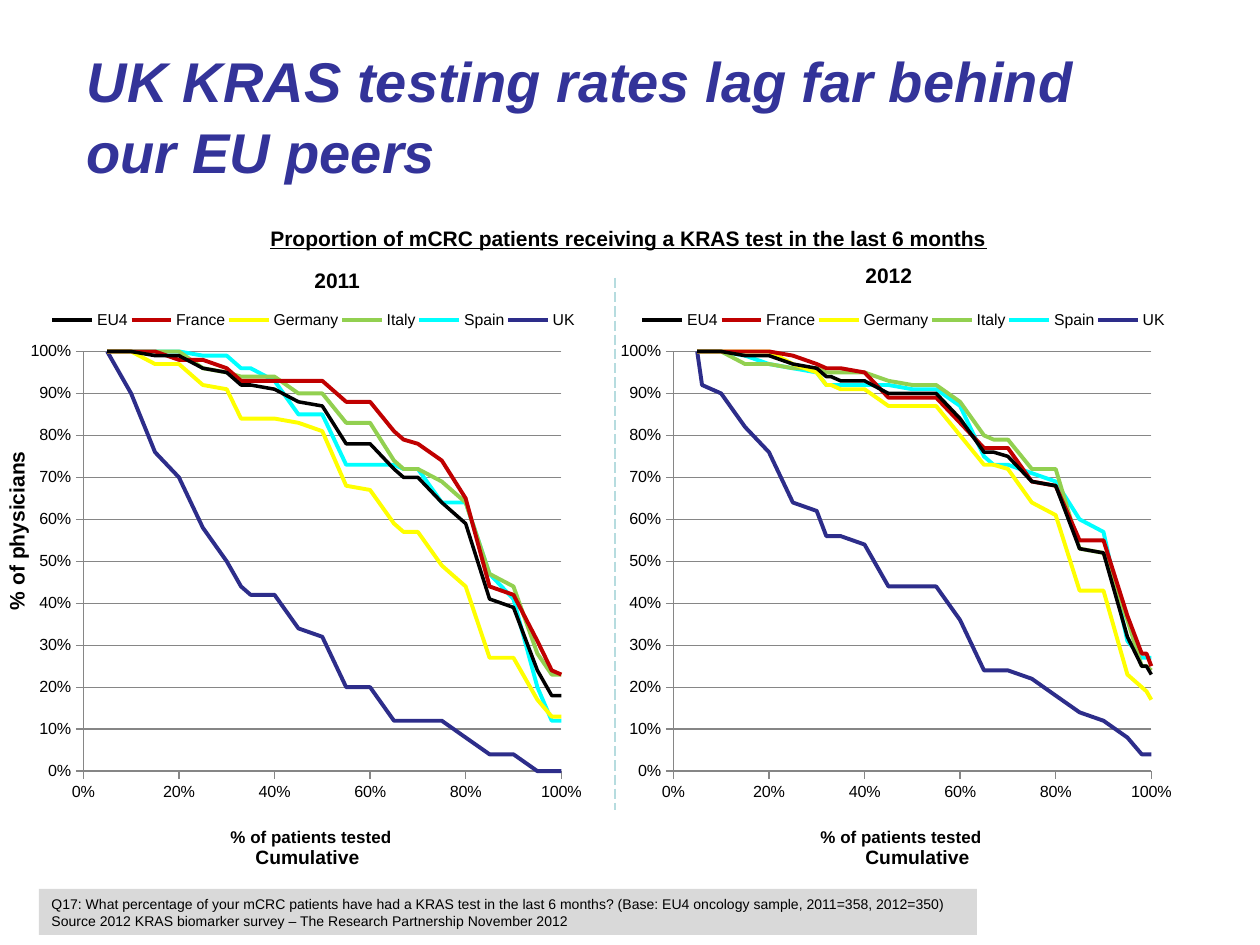
from dataclasses import dataclass

from lxml.etree import SubElement
from pptx import Presentation
from pptx.chart.data import XyChartData
from pptx.dml.color import RGBColor
from pptx.enum.chart import XL_CHART_TYPE, XL_LEGEND_POSITION, XL_TICK_MARK
from pptx.enum.dml import MSO_LINE
from pptx.enum.shapes import MSO_CONNECTOR, MSO_SHAPE
from pptx.enum.text import MSO_ANCHOR, PP_ALIGN
from pptx.oxml import parse_xml
from pptx.oxml.ns import nsdecls, qn
from pptx.util import Emu, Pt

SCALE = 914400 / 126
FONT = "Arial"
COLORS = {
    "title": "333399", "text": "000000", "note": "D9D9D9", "rule": "B6DCDF", "grid": "868686",
    "EU4": "000000", "France": "C00000", "Germany": "FFFF00",
    "Italy": "92D050", "Spain": "00FFFF", "UK": "2D2D8A",
}
H = None  # the curve holds its last value; every curve starts at 100


@dataclass
class Label:
    text: str
    box: tuple[int, int, int, int]
    size: int = 12
    underline: bool = False
    turn: int = 0


@dataclass
class Panel:
    """One year's chart in whole percents: x runs in fives, plus some extra points."""
    left: int
    extra: set[int]
    rows: dict[str, list[int | None]]


LABELS = [
    Label("Proportion of mCRC patients receiving a KRAS test in the last 6 months",
          (258, 219, 794, 49), underline=True),
    Label("2011", (302, 261, 233, 44)),
    Label("2012", (853, 256, 233, 49)),
    Label("% of physicians", (-97, 484, 233, 44), turn=270),
    Label("Cumulative", (243, 839, 238, 52), size=11),
    Label("Cumulative", (853, 839, 238, 52), size=11),
]

PANELS = [
    Panel(20, {33, 67, 98}, {
        "EU4": [H, H, 99, H, 96, 95, 92, H, 91, 88, 87, 78, H, 72, 70, H, 64, 59, 41, 39, 24, 18, H],
        "France": [H, H, H, 98, H, 96, 93, H, H, H, H, 88, H, 81, 79, 78, 74, 65, 44, 42, 31, 24, 23],
        "Germany": [H, H, 97, H, 92, 91, 84, H, H, 83, 81, 68, 67, 59, 57, H, 49, 44, 27, H, 17, 13, H],
        "Italy": [H, H, H, H, 96, 95, 94, H, H, 90, H, 83, H, 74, 72, H, 69, 64, 47, 44, 28, 23, H],
        "Spain": [H, H, H, H, 99, H, 96, H, 93, 85, H, 73, H, H, 72, H, 64, H, 47, 41, 20, 12, H],
        "UK": [H, 90, 76, 70, 58, 50, 44, 42, H, 34, 32, 20, H, 12, H, H, H, 8, 4, H, 0, H, H],
    }),
    Panel(610, {6, 32, 33, 67, 98, 99}, {
        "EU4": [H, H, H, 99, H, 97, 96, 94, H, 93, H, 90, H, H, 84, 76, H, 75, 69, 68, 53, 52, 32, 25, H, 23],
        "France": [H, H, H, H, H, 99, 97, 96, H, H, 95, 89, H, H, 83, 77, H, H, 69, 68, 55, H, 37, 28, H, 25],
        "Germany": [H, H, H, H, H, 97, 95, 92, H, 91, H, 87, H, H, 80, 73, H, 72, 64, 61, 43, H, 23, 20, 19, 17],
        "Italy": [H, H, H, 97, H, 96, H, 95, H, H, H, 93, 92, H, 88, 80, 79, H, 72, H, 53, 52, 36, 25, H, 24],
        "Spain": [H, H, H, 99, 97, 96, 95, 92, H, H, H, H, 91, H, 87, 75, 73, H, 71, 69, 60, 57, 31, 27, H, H],
        "UK": [H, 92, 90, 82, 76, 64, 62, 56, H, H, 54, 44, H, H, 36, 24, H, H, 22, 18, 14, 12, 8, 4, H, H],
    }),
]


def px(*nums: int) -> list[Emu]:
    return [Emu(round(n * SCALE)) for n in nums]


def rgb(name: str) -> RGBColor:
    return RGBColor.from_string(COLORS[name])


def style(font, size: float, color: str = "text", bold=False, italic=False, underline=False) -> None:
    font.name, font.size = FONT, Pt(size)
    font.bold, font.italic, font.underline = bold, italic, underline
    font.color.rgb = rgb(color)


def write(frame, text: str, anchor=MSO_ANCHOR.TOP, space: float = 1, **form) -> None:
    """Fill a text frame, one paragraph a line; form goes to style()."""
    frame.word_wrap = True
    frame.vertical_anchor = anchor
    frame.text = text
    for para in frame.paragraphs:
        para.alignment = PP_ALIGN.LEFT
        para.line_spacing = space
        for run in para.runs:
            style(run.font, **form)


def place(node, index: int, **parts: float) -> None:
    """Give a chart part a fixed layout, in fractions of the chart."""
    for old in node.findall(qn("c:layout")):
        node.remove(old)
    layout = parse_xml(f"<c:layout {nsdecls('c')}><c:manualLayout/></c:layout>")
    manual = layout[0]
    if node.tag == qn("c:plotArea"):
        SubElement(manual, qn("c:layoutTarget")).set("val", "inner")
    for key in "xy":
        SubElement(manual, qn(f"c:{key}Mode")).set("val", "edge")
    for key, num in parts.items():
        SubElement(manual, qn(f"c:{key}")).set("val", str(num))
    node.insert(index, layout)


def scale_axis(axis, step: float, grid: bool) -> None:
    axis.minimum_scale, axis.maximum_scale, axis.major_unit = 0, 1, step
    axis.major_tick_mark, axis.minor_tick_mark = XL_TICK_MARK.OUTSIDE, XL_TICK_MARK.NONE
    axis.has_major_gridlines = grid
    lines = [axis.format.line] + ([axis.major_gridlines.format.line] if grid else [])
    for line in lines:
        line.color.rgb, line.width = rgb("grid"), Pt(0.75)
    axis.tick_labels.number_format = "0%"
    axis.tick_labels.number_format_is_linked = False
    style(axis.tick_labels.font, 9.2)


def chart_data(panel: Panel) -> XyChartData:
    data = XyChartData(number_format="0%")
    xs = sorted({*range(5, 101, 5), *panel.extra})
    for name, row in panel.rows.items():
        series = data.add_series(name)
        last = 100
        for x, y in zip(xs, row):
            last = last if y is H else y
            series.add_data_point(x / 100, last / 100)
    return data


def add_panel(slide, panel: Panel) -> None:
    chart = slide.shapes.add_chart(XL_CHART_TYPE.XY_SCATTER_LINES_NO_MARKERS,
                                   *px(panel.left, 294, 576, 575), chart_data(panel)).chart
    chart.has_title = False
    style(chart.font, 15.1)
    plot = chart.plots[0]
    plot.vary_by_categories = False
    for series in plot.series:
        series.smooth = False
        line = series.format.line
        line.color.rgb = rgb(series.name)
        line.width = Pt(2 if series.name == "EU4" else 2.25)

    scale_axis(chart.category_axis, 0.2, False)
    scale_axis(chart.value_axis, 0.1, True)
    write(chart.category_axis.axis_title.text_frame, "% of patients tested", size=9.7, bold=True)
    chart.has_legend = True
    chart.legend.position = XL_LEGEND_POSITION.TOP
    chart.legend.include_in_layout = False
    style(chart.legend.font, 9)

    root = chart.element
    place(root.xpath(".//c:plotArea")[0], 0, x=0.11, y=0.1, w=0.83, h=0.73)
    place(root.xpath(".//c:legend")[0], 1, x=0.05, y=0.02, w=0.92, h=0.05)
    place(root.xpath(".//c:valAx/c:title")[0], 1, x=0.36, y=0.92)


def add_label(slide, label: Label) -> None:
    box = slide.shapes.add_textbox(*px(*label.box))
    box.rotation = label.turn
    write(box.text_frame, label.text, size=label.size, bold=True, underline=label.underline)


def add_note(slide, text: str) -> None:
    note = slide.shapes.add_shape(MSO_SHAPE.RECTANGLE, *px(39, 889, 938, 46))
    note.shadow.inherit = False
    note.fill.solid()
    note.fill.fore_color.rgb = rgb("note")
    note.line.fill.background()
    write(note.text_frame, text, anchor=MSO_ANCHOR.MIDDLE, size=8)


def add_rule(slide) -> None:
    rule = slide.shapes.add_connector(MSO_CONNECTOR.STRAIGHT, *px(615, 278, 615, 810))
    rule.line.color.rgb, rule.line.width = rgb("rule"), Pt(0.75)
    rule.line.dash_style = MSO_LINE.LONG_DASH
    SubElement(rule.element.spPr, qn("a:effectLst"))


def main() -> None:
    deck = Presentation()
    deck.slide_width, deck.slide_height = px(1260, 945)
    slide = deck.slides.add_slide(deck.slide_layouts[5])
    title = slide.shapes.title
    title.left, title.top, title.width, title.height = px(74, 37, 1055, 139)
    write(title.text_frame, "UK KRAS testing rates lag far behind our EU peers", space=1.05,
          size=32, color="title", bold=True, italic=True)
    add_note(slide, "Q17: What percentage of your mCRC patients have had a KRAS test in the last 6 months? "
                    "(Base: EU4 oncology sample, 2011=358, 2012=350)\n"
                    "Source 2012 KRAS biomarker survey – The Research Partnership November 2012")
    add_rule(slide)
    for panel in PANELS:
        add_panel(slide, panel)
    for label in LABELS:
        add_label(slide, label)
    deck.save("out.pptx")


if __name__ == "__main__":
    main()
